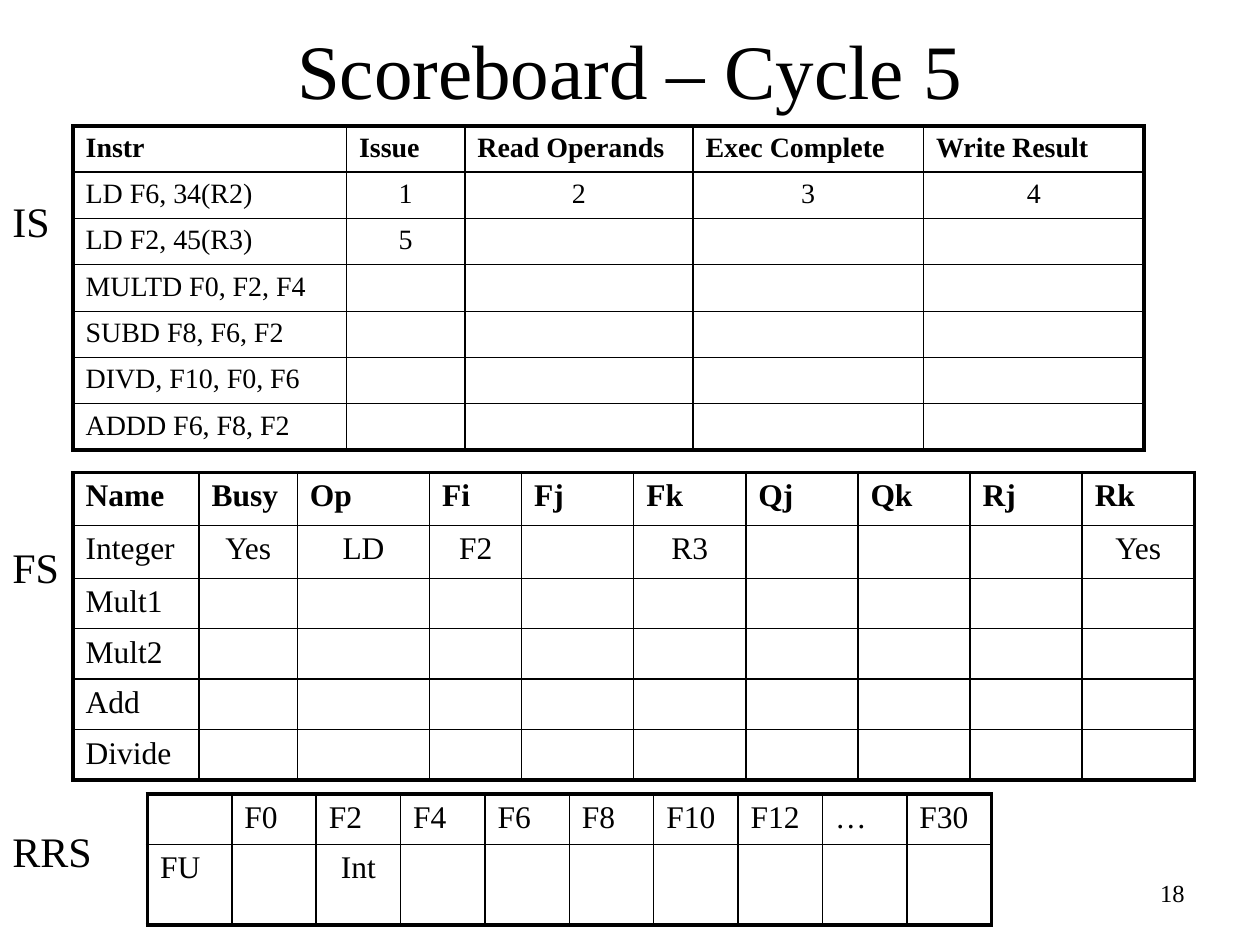
import dataclasses

import pptx
import pptx.util
import pptx.dml.color
import pptx.enum.text
import pptx.oxml
import pptx.oxml.ns
from lxml import etree

Inches = pptx.util.Inches
Pt = pptx.util.Pt
Align = pptx.enum.text.PP_ALIGN
Anchor = pptx.enum.text.MSO_ANCHOR


@dataclasses.dataclass(frozen=True)
class Theme:
    font: str = "Times New Roman"
    ink: str = "000000"
    title: int = 44
    label: int = 24
    large: int = 18
    small: int = 16
    number: int = 14
    thick: float = 2.25
    thin: float = 1


THEME = Theme()

INSTR = [
    ["Instr", "Issue", "Read Operands", "Exec Complete", "Write Result"],
    ["LD F6, 34(R2)", "1", "2", "3", "4"],
    ["LD F2, 45(R3)", "5"],
    ["MULTD F0, F2, F4"],
    ["SUBD F8, F6, F2"],
    ["DIVD, F10, F0, F6"],
    ["ADDD F6, F8, F2"],
]
UNITS = [
    ["Name", "Busy", "Op", "Fi", "Fj", "Fk", "Qj", "Qk", "Rj", "Rk"],
    ["Integer", "Yes", "LD", "F2", "", "R3", "", "", "", "Yes"],
    ["Mult1"],
    ["Mult2"],
    ["Add"],
    ["Divide"],
]
REGS = [
    ["", "F0", "F2", "F4", "F6", "F8", "F10", "F12", "…", "F30"],
    ["FU", "", "Int"],
]


def style(para, size, bold=False, align=Align.LEFT):
    para.alignment = align
    for run in para.runs:
        run.font.name = THEME.font
        run.font.size = Pt(size)
        run.font.bold = bold
        run.font.color.rgb = pptx.dml.color.RGBColor.from_string(THEME.ink)


def size_blank(para, size):
    """Keep an empty cell from growing its row."""
    end = etree.SubElement(para._p, pptx.oxml.ns.qn("a:endParaRPr"))
    end.set("sz", str(size * 100))


def border(cell, widths):
    """Draw the sides of a cell; widths maps side tags to points."""
    props = cell._tc.get_or_add_tcPr()
    for spot, (side, width) in enumerate(widths.items()):
        line = pptx.oxml.parse_xml(
            f'<a:{side} {pptx.oxml.ns.nsdecls("a")} w="{Pt(width)}">'
            f'<a:solidFill><a:srgbClr val="{THEME.ink}"/></a:solidFill>'
            f"</a:{side}>"
        )
        props.insert(spot, line)


def add_grid(slide, left, top, cols, rows, data, size, bold=True):
    """Place a table with a thick frame, a header row and centred values."""
    frame = slide.shapes.add_table(
        len(rows), len(cols), Inches(left), Inches(top),
        Inches(sum(cols)), Inches(sum(rows)))
    table = frame.table
    table.first_row = table.horz_banding = False
    for col, width in zip(table.columns, cols):
        col.width = Inches(width)
    for row, height in zip(table.rows, rows):
        row.height = Inches(height)

    def edge(outer):
        return THEME.thick if outer else THEME.thin

    for r in range(len(rows)):
        for c in range(len(cols)):
            cell = table.cell(r, c)
            cell.fill.background()
            border(cell, {
                "lnL": edge(c == 0),
                "lnR": edge(c == len(cols) - 1),
                "lnT": edge(r == 0),
                "lnB": edge(r == len(rows) - 1),
            })
            text = data[r][c] if c < len(data[r]) else ""
            para = cell.text_frame.paragraphs[0]
            if text:
                para.text = text
                align = Align.CENTER if r and c else Align.LEFT
                style(para, size, bold and r == 0, align)
            else:
                size_blank(para, size)


def add_text(slide, box, text, size, align=Align.LEFT, wrap=False):
    shape = slide.shapes.add_textbox(*map(Inches, box))
    frame = shape.text_frame
    frame.word_wrap = wrap
    frame.text = text
    style(frame.paragraphs[0], size, align=align)


def set_title(slide, box, text):
    title = slide.shapes.title
    title.left, title.top, title.width, title.height = map(Inches, box)
    frame = title.text_frame
    frame.text = text
    frame.vertical_anchor = Anchor.MIDDLE
    style(frame.paragraphs[0], THEME.title, align=Align.CENTER)


def main():
    deck = pptx.Presentation()
    deck.slide_width, deck.slide_height = Inches(10), Inches(7.5)
    slide = deck.slides.add_slide(deck.slide_layouts[5])

    add_text(slide, (7.42, 6.92, 2.08, 0.5), "18", THEME.number,
             Align.RIGHT, wrap=True)
    set_title(slide, (0.75, -0.08, 8.5, 1.25), "Scoreboard – Cycle 5")
    add_grid(slide, 0.58, 1, [2.17, 0.94, 1.81, 1.83, 1.75],
             [0.35] * 3 + [0.37] + [0.35] * 3, INSTR, THEME.small)
    add_grid(slide, 0.58, 3.75, [1, 0.78, 1.05, 0.73] + [0.89] * 6,
             [0.42] * 2 + [0.38] * 4, UNITS, THEME.large)
    add_grid(slide, 1.17, 6.3, [0.67] * 10, [0.38, 0.64], REGS,
             THEME.large, bold=False)
    for text, top, width in (("IS", 1.5, 0.5), ("FS", 4.25, 0.57),
                             ("RRS", 6.5, 0.83)):
        add_text(slide, (0, top, width, 0.5), text, THEME.label)
    deck.save("out.pptx")


if __name__ == "__main__":
    main()
